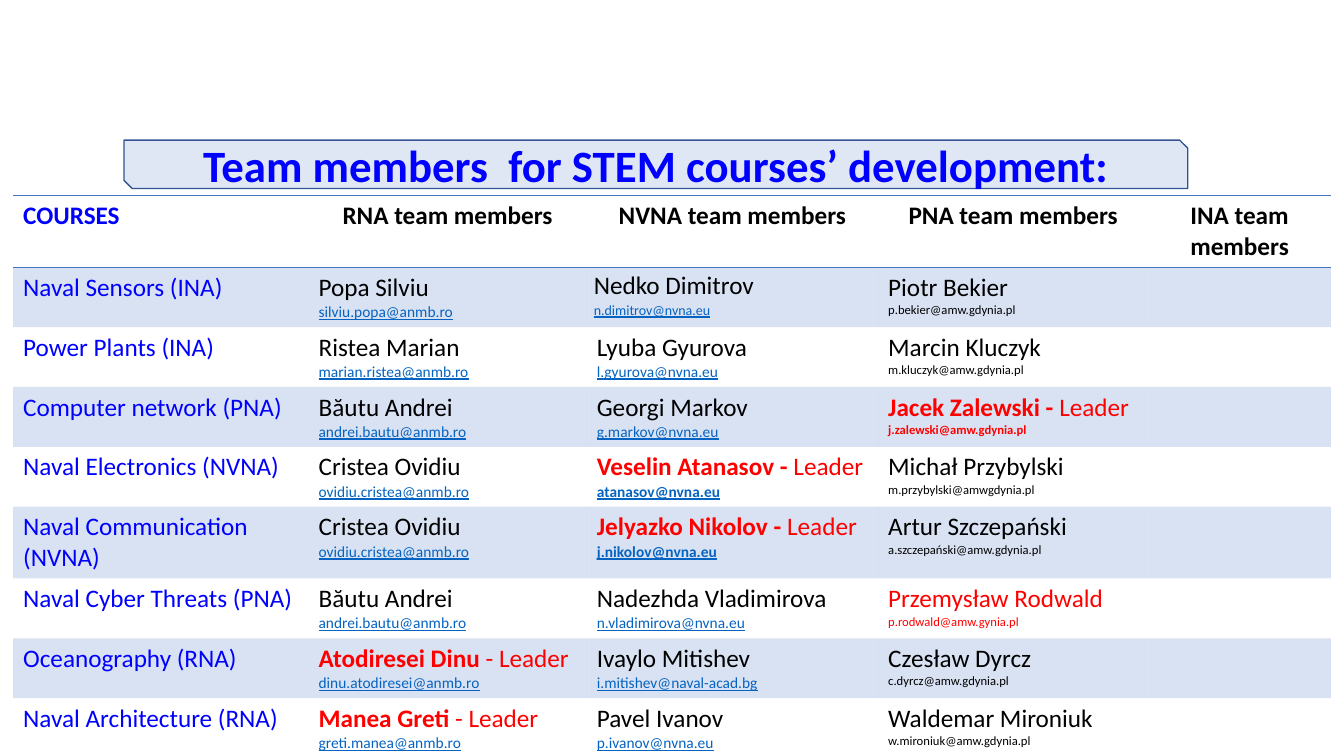
from dataclasses import dataclass

from lxml.etree import SubElement
from pptx import Presentation
from pptx.dml.color import RGBColor
from pptx.enum.shapes import MSO_SHAPE
from pptx.enum.text import MSO_ANCHOR, PP_ALIGN
from pptx.oxml import parse_xml
from pptx.oxml.ns import nsdecls, qn
from pptx.util import Inches, Pt

BLACK, BLUE, RED = "000000", "0000FF", "FF0000"
LINK, ACCENT = "0563C1", "4472C4"
NO_STYLE = "{2D5ABB26-0587-4C30-8999-92F81FD0307C}"


@dataclass
class Member:
    name: str
    email: str
    role: str = ""
    red: bool = False


HEADERS = ["COURSES", "RNA team members", "NVNA team members",
           "PNA team members", "INA team members"]
COLUMN_WIDTHS = [2.93, 2.76, 2.89, 2.68, 1.81]
ROW_HEIGHT = 0.52

COURSES = [
    ("Naval Sensors (INA)",
     Member("Popa Silviu", "silviu.popa@anmb.ro"),
     Member("Nedko Dimitrov", "n.dimitrov@nvna.eu"),
     Member("Piotr Bekier", "p.bekier@amw.gdynia.pl")),
    ("Power Plants (INA)",
     Member("Ristea Marian", "marian.ristea@anmb.ro"),
     Member("Lyuba Gyurova", "l.gyurova@nvna.eu"),
     Member("Marcin Kluczyk", "m.kluczyk@amw.gdynia.pl")),
    ("Computer network (PNA)",
     Member("Băutu Andrei", "andrei.bautu@anmb.ro"),
     Member("Georgi Markov", "g.markov@nvna.eu"),
     Member("Jacek Zalewski - ", "j.zalewski@amw.gdynia.pl", "Leader", True)),
    ("Naval Electronics (NVNA)",
     Member("Cristea Ovidiu", "ovidiu.cristea@anmb.ro"),
     Member("Veselin Atanasov - ", "atanasov@nvna.eu", "Leader", True),
     Member("Michał Przybylski", "m.przybylski@amwgdynia.pl")),
    ("Naval Communication (NVNA)",
     Member("Cristea Ovidiu", "ovidiu.cristea@anmb.ro"),
     Member("Jelyazko Nikolov - ", "j.nikolov@nvna.eu", "Leader", True),
     Member("Artur Szczepański ", "a.szczepański@amw.gdynia.pl")),
    ("Naval Cyber Threats (PNA)",
     Member("Băutu Andrei", "andrei.bautu@anmb.ro"),
     Member("Nadezhda Vladimirova", "n.vladimirova@nvna.eu"),
     Member("Przemysław Rodwald", "p.rodwald@amw.gynia.pl", red=True)),
    ("Oceanography (RNA)",
     Member("Atodiresei Dinu ", "dinu.atodiresei@anmb.ro", "- Leader", True),
     Member("Ivaylo Mitishev", "i.mitishev@naval-acad.bg"),
     Member("Czesław Dyrcz", "c.dyrcz@amw.gdynia.pl")),
    ("Naval Architecture (RNA)",
     Member("Manea Greti ", "greti.manea@anmb.ro", "- Leader", True),
     Member("Pavel Ivanov", "p.ivanov@nvna.eu"),
     Member("Waldemar Mironiuk", "w.mironiuk@amw.gdynia.pl")),
]


def color(value):
    return RGBColor.from_string(value)


def add_run(paragraph, text, size, text_color, bold=False, underline=False):
    run = paragraph.add_run()
    run.text = text
    font = run.font
    font.name, font.size = "Calibri", Pt(size)
    font.bold, font.underline = bold, underline
    font.color.rgb = color(text_color)


def shade(cell, shaded):
    if not shaded:
        cell.fill.background()
        return
    cell.fill.solid()
    cell.fill.fore_color.rgb = color(ACCENT)
    tint = cell.fill._xPr.find(".//" + qn("a:srgbClr"))
    SubElement(tint, qn("a:alpha"), val="20000")


def add_border(cell, side):
    border = parse_xml(
        f'<a:{side} {nsdecls("a")} w="12700"><a:solidFill>'
        f'<a:srgbClr val="{ACCENT}"/></a:solidFill></a:{side}>')
    cell._tc.get_or_add_tcPr().insert(0, border)


def fill_member(cell, member, school):
    """Name and role on the first line, e-mail address below."""
    name_color = RED if member.red else BLACK
    leader = bool(member.role)
    paragraph = cell.text_frame.paragraphs[0]
    add_run(paragraph, member.name, 18, name_color, leader)
    if leader:
        add_run(paragraph, member.role, 18, name_color)
    # A name ending in a space without a role shares its paragraph
    if leader or not member.name.endswith(" "):
        paragraph = cell.text_frame.add_paragraph()
    if school == "PNA":
        add_run(paragraph, member.email, 9, name_color, leader)
    else:
        add_run(paragraph, member.email, 11, LINK,
                leader and school == "NVNA", True)


def tighten(cell):
    cell.margin_left = cell.margin_right = Inches(0.07)
    cell.margin_top, cell.margin_bottom = Inches(0.01), 0
    for paragraph in cell.text_frame.paragraphs:
        paragraph.line_spacing = 1.07
    cell.text_frame.paragraphs[1].runs[0].font.size = Pt(10)


def add_title(slide, left, top, width, height):
    shape = slide.shapes.add_shape(
        MSO_SHAPE.SNIP_2_DIAG_RECTANGLE,
        Inches(left), Inches(top), Inches(width), Inches(height))
    shape.shadow.inherit = False
    shape.fill.solid()
    shape.fill.fore_color.rgb = color("DFE7F5")
    shape.line.color.rgb = color("325491")
    shape.line.width = Pt(1)
    text_frame = shape.text_frame
    text_frame.word_wrap = True
    text_frame.vertical_anchor = MSO_ANCHOR.MIDDLE
    paragraph = text_frame.paragraphs[0]
    paragraph.alignment = PP_ALIGN.CENTER
    add_run(paragraph, "Team members  for STEM courses’ development:",
            32, BLUE, True)


def add_team_table(slide, left, top):
    row_count = len(COURSES) + 1
    frame = slide.shapes.add_table(
        row_count, len(HEADERS), Inches(left), Inches(top),
        Inches(sum(COLUMN_WIDTHS)), Inches(ROW_HEIGHT * row_count))
    table = frame.table
    table._tbl.tblPr.find(qn("a:tableStyleId")).text = NO_STYLE
    for column, width in zip(table.columns, COLUMN_WIDTHS):
        column.width = Inches(width)

    # Banded fills
    for row_index in range(row_count):
        for cell in table.rows[row_index].cells:
            shade(cell, row_index % 2 == 1)

    # Header row and closing line
    for index, header in enumerate(HEADERS):
        cell = table.cell(0, index)
        paragraph = cell.text_frame.paragraphs[0]
        paragraph.alignment = PP_ALIGN.CENTER if index else PP_ALIGN.LEFT
        add_run(paragraph, header, 18, BLACK if index else BLUE, True)
        add_border(cell, "lnB")
        add_border(cell, "lnT")
        add_border(table.cell(row_count - 1, index), "lnB")

    # One row per course
    for row_index, (course, *members) in enumerate(COURSES, 1):
        paragraph = table.cell(row_index, 0).text_frame.paragraphs[0]
        add_run(paragraph, course, 18, BLUE)
        for index, member in enumerate(members, 1):
            school = HEADERS[index].split()[0]
            fill_member(table.cell(row_index, index), member, school)
    tighten(table.cell(1, 2))


def main():
    presentation = Presentation()
    presentation.slide_width = Inches(13.33)
    presentation.slide_height = Inches(7.5)
    slide = presentation.slides.add_slide(presentation.slide_layouts[6])
    add_title(slide, 1.23, 1.39, 10.55, 0.48)
    add_team_table(slide, 0.13, 1.94)
    presentation.save("out.pptx")


if __name__ == "__main__":
    main()
